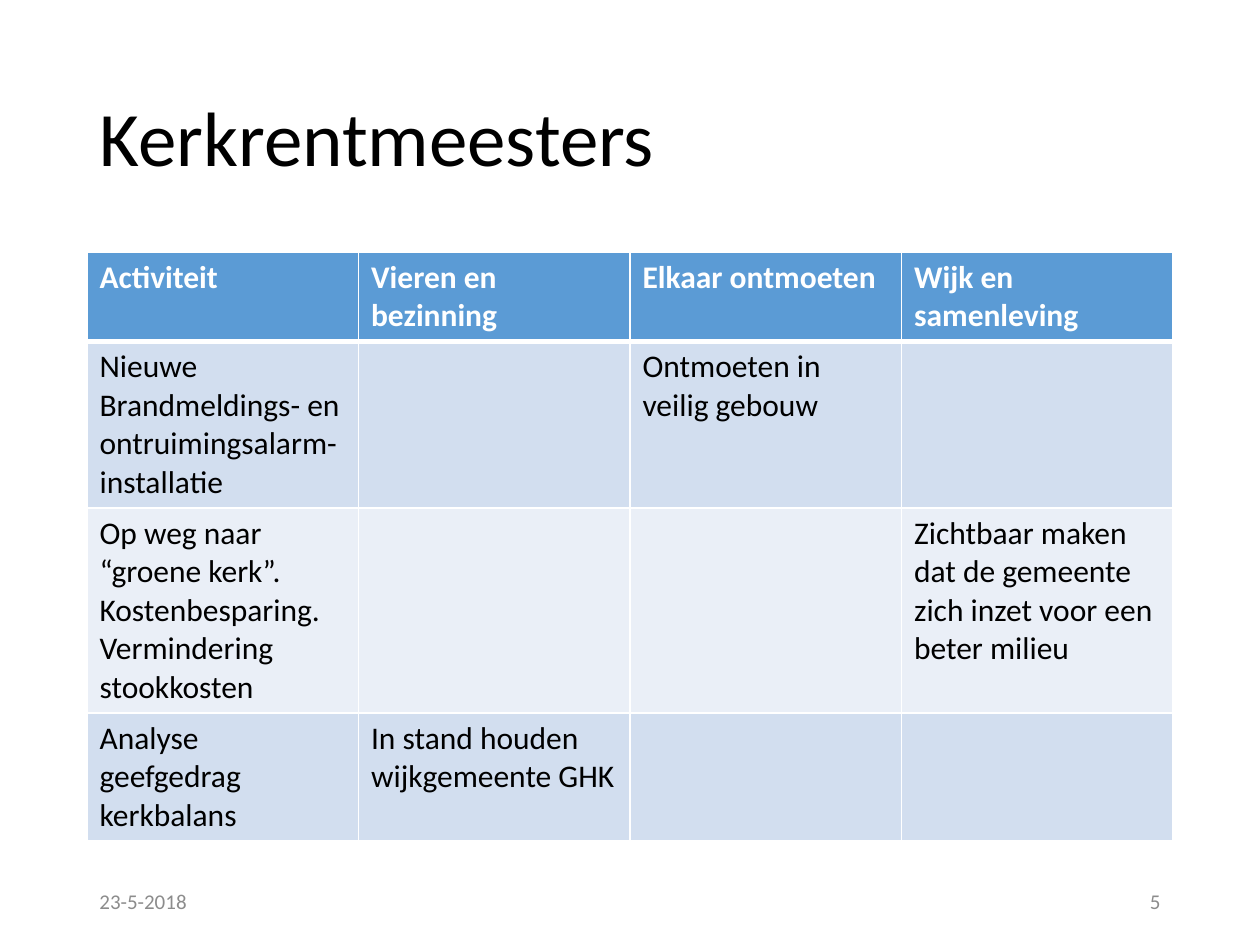
from typing import NamedTuple

from lxml import etree
from pptx import Presentation
from pptx.dml.color import RGBColor
from pptx.enum.text import MSO_ANCHOR, MSO_AUTO_SIZE, PP_ALIGN
from pptx.oxml.ns import qn
from pptx.util import Pt

LEFT, RIGHT = PP_ALIGN.LEFT, PP_ALIGN.RIGHT
MIDDLE = MSO_ANCHOR.MIDDLE
NO_FIT = MSO_AUTO_SIZE.NONE

FONT = "Calibri"
BLACK = RGBColor(0x00, 0x00, 0x00)
WHITE = RGBColor(0xFF, 0xFF, 0xFF)
GREY = RGBColor(0x8C, 0x8C, 0x8C)
HEADER_BLUE = RGBColor(0x5B, 0x9B, 0xD5)
BANDS = (RGBColor(0xD2, 0xDE, 0xEF), RGBColor(0xEA, 0xEF, 0xF7))

PX_PER_INCH = 126
MARGIN, CONTENT_W = 87, 1086
ROW_MIN_H = 52

HEADERS = ("Activiteit", "Vieren en bezinning", "Elkaar ontmoeten",
           "Wijk en samenleving")
ACTIVITIES = (
    ("Nieuwe Brandmeldings- en ontruimingsalarm-\ninstallatie", "",
     "Ontmoeten in veilig gebouw", ""),
    ("Op weg naar “groene kerk”. Kostenbesparing. Vermindering stookkosten",
     "", "", "Zichtbaar maken dat de gemeente zich inzet voor een beter milieu"),
    ("Analyse geefgedrag kerkbalans", "In stand houden wijkgemeente GHK",
     "", ""),
)


class FooterItem(NamedTuple):
    text: str
    x: int
    align: PP_ALIGN


FOOTER = (FooterItem("23-5-2018", MARGIN, LEFT), FooterItem("5", 890, RIGHT))


def px(n: int) -> int:
    return round(n * 914400 / PX_PER_INCH)


def style_text(tf, size: int, color: RGBColor, bold: bool = False,
               align: PP_ALIGN = LEFT) -> None:
    for p in tf.paragraphs:
        p.alignment = align
        for r in p.runs:
            r.font.name = FONT
            r.font.size = Pt(size)
            r.font.bold = bold
            r.font.color.rgb = color


def set_borders(cell, top: int, bottom: int) -> None:
    tc_pr = cell._tc.get_or_add_tcPr()
    for side, width in (("L", 1), ("R", 1), ("T", top), ("B", bottom)):
        ln = etree.SubElement(tc_pr, qn(f"a:ln{side}"), w=str(Pt(width)))
        fill = etree.SubElement(ln, qn("a:solidFill"))
        etree.SubElement(fill, qn("a:srgbClr"), val=str(WHITE))


def add_title(s, text: str) -> None:
    title = s.shapes.title
    title.left, title.top = px(MARGIN), px(50)
    title.width, title.height = px(CONTENT_W), px(183)
    tf = title.text_frame
    tf.text = text
    tf.auto_size = NO_FIT
    tf.vertical_anchor = MIDDLE
    tf.paragraphs[0].line_spacing = 0.9
    style_text(tf, 44, BLACK)


def add_activity_table(s) -> None:
    rows = (HEADERS, *ACTIVITIES)
    height = px(580)
    frame = s.shapes.add_table(len(rows), len(HEADERS), px(MARGIN), px(252),
                               px(CONTENT_W), height)
    table = frame.table
    for i, texts in enumerate(rows):
        # Rows grow with their text from one shared minimum
        table.rows[i].height = px(ROW_MIN_H)
        header = i == 0
        for j, text in enumerate(texts):
            cell = table.cell(i, j)
            set_borders(cell, top=3 if i == 1 else 1, bottom=3 if header else 1)
            cell.fill.solid()
            cell.fill.fore_color.rgb = HEADER_BLUE if header else BANDS[(i - 1) % 2]
            cell.text_frame.text = text
            style_text(cell.text_frame, 18, WHITE if header else BLACK, header)
    frame.height = height


def add_footer(s, item: FooterItem) -> None:
    box = s.shapes.add_textbox(px(item.x), px(876), px(283), px(50))
    tf = box.text_frame
    tf.word_wrap = True
    tf.vertical_anchor = MIDDLE
    tf.text = item.text
    style_text(tf, 12, GREY, align=item.align)


def main() -> None:
    prs = Presentation()
    prs.slide_width, prs.slide_height = px(1260), px(945)
    s = prs.slides.add_slide(prs.slide_layouts[5])

    # Title
    add_title(s, "Kerkrentmeesters")

    # Activities by theme
    add_activity_table(s)

    # Date and slide number
    for item in FOOTER:
        add_footer(s, item)

    prs.save("out.pptx")


if __name__ == "__main__":
    main()
